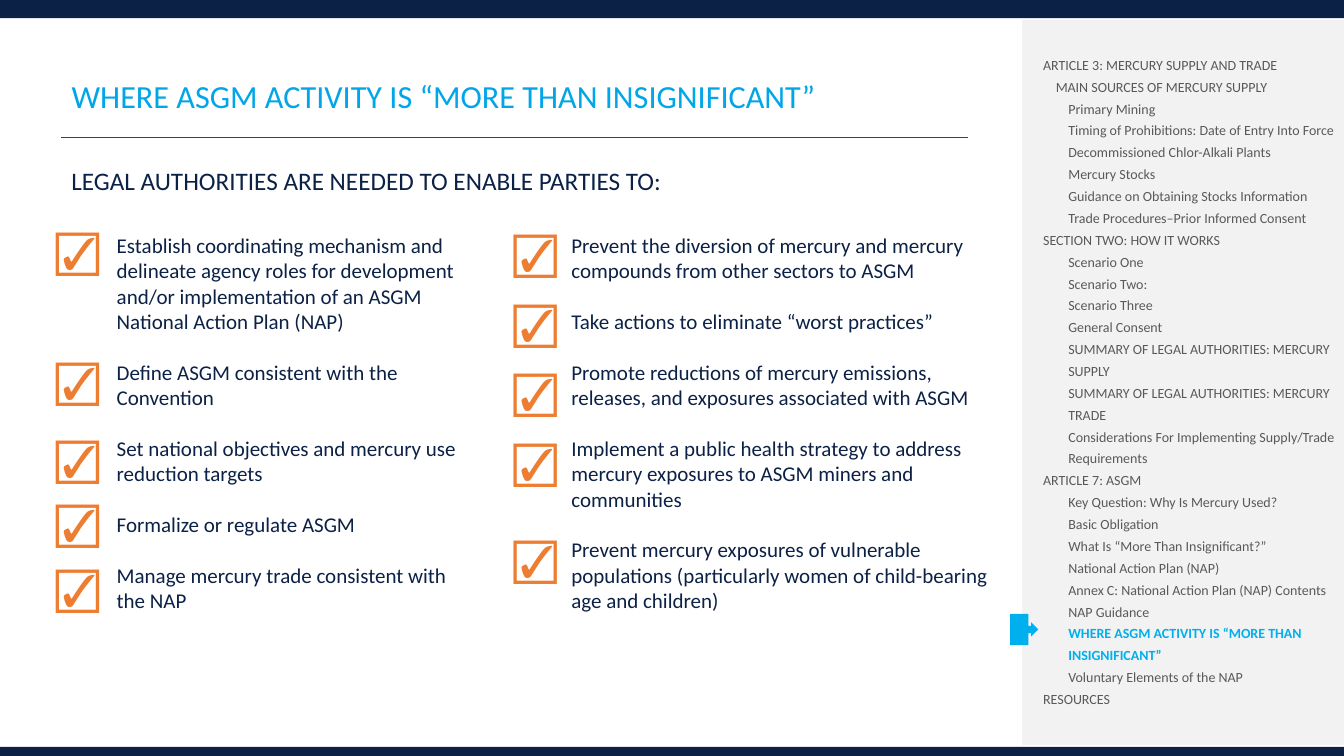
from lxml import etree
from pptx import Presentation
from pptx.dml.color import RGBColor
from pptx.enum.shapes import MSO_CONNECTOR, MSO_SHAPE
from pptx.enum.text import MSO_ANCHOR, MSO_AUTO_SIZE, PP_ALIGN
from pptx.oxml.ns import qn
from pptx.util import Inches, Pt

RECTANGLE = MSO_SHAPE.RECTANGLE
CALLOUT = MSO_SHAPE.RIGHT_ARROW_CALLOUT
STRAIGHT = MSO_CONNECTOR.STRAIGHT
TOP = MSO_ANCHOR.TOP
LEFT = PP_ALIGN.LEFT
FIT_SHAPE = MSO_AUTO_SIZE.SHAPE_TO_FIT_TEXT
FIXED = MSO_AUTO_SIZE.NONE

CELL = Inches(0.1)
COLUMNS, ROWS = 133.33, 75
MARGIN = 6.1
NAVY, ORANGE, SKY, CYAN = "0C2146", "ED7D31", "00A6E8", "00AFEE"
PALE, GREY, DARK = "F2F2F2", "595959", "404040"
LIST_GAP = 18.3
INDENT = 9

TITLE = "WHERE ASGM ACTIVITY IS “MORE THAN INSIGNIFICANT”"
SUBTITLE = "LEGAL AUTHORITIES ARE NEEDED TO ENABLE PARTIES TO:"

CHECKLISTS = [
    (4.5, 10.6, 38.7, [
        (21.6, "Establish coordinating mechanism and delineate agency roles for development "
               "and/or implementation of an ASGM National Action Plan (NAP)"),
        (34.5, "Define ASGM consistent with the Convention"),
        (42.2, "Set national objectives and mercury use reduction targets"),
        (48.6, "Formalize or regulate ASGM"),
        (55, "Manage mercury trade consistent with\vthe NAP"),
    ]),
    (49.9, 55.7, 43.6, [
        (21.8, "Prevent the diversion of mercury and mercury compounds from other sectors to ASGM"),
        (28.7, "Take actions to eliminate “worst practices”"),
        (35.6, "Promote reductions of mercury emissions, releases, and exposures associated with ASGM"),
        (42.5, "Implement a public health strategy to address mercury exposures to ASGM miners "
               "and communities"),
        (52.2, "Prevent mercury exposures of vulnerable populations (particularly women of "
               "child-bearing age and children)"),
    ]),
]

CONTENTS = [
    (0, "ARTICLE 3: MERCURY SUPPLY AND TRADE"),
    (1, "MAIN SOURCES OF MERCURY SUPPLY"),
    (2, "Primary Mining"),
    (2, "Timing of Prohibitions: Date of Entry Into Force"),
    (2, "Decommissioned Chlor-Alkali Plants"),
    (2, "Mercury Stocks"),
    (2, "Guidance on Obtaining Stocks Information"),
    (2, "Trade Procedures–Prior Informed Consent"),
    (0, "SECTION TWO: HOW IT WORKS"),
    (2, "Scenario One"),
    (2, "Scenario Two:"),
    (2, "Scenario Three"),
    (2, "General Consent"),
    (2, "SUMMARY OF LEGAL AUTHORITIES: MERCURY"),
    (2, "SUPPLY"),
    (2, "SUMMARY OF LEGAL AUTHORITIES: MERCURY"),
    (2, "TRADE"),
    (2, "Considerations For Implementing Supply/Trade"),
    (2, "Requirements"),
    (0, "ARTICLE 7: ASGM"),
    (2, "Key Question: Why Is Mercury Used?"),
    (2, "Basic Obligation"),
    (2, "What Is “More Than Insignificant?”"),
    (2, "National Action Plan (NAP)"),
    (2, "Annex C: National Action Plan (NAP) Contents"),
    (2, "NAP Guidance"),
    (2, "WHERE ASGM ACTIVITY IS “MORE THAN"),
    (2, "INSIGNIFICANT”"),
    (2, "Voluntary Elements of the NAP"),
    (0, "RESOURCES"),
]
CURRENT = ("WHERE ASGM ACTIVITY IS “MORE THAN", "INSIGNIFICANT”")


def color(value):
    return RGBColor.from_string(value)


def cells(*lengths):
    return [round(length * CELL) for length in lengths]


def style(paragraph, size, ink, font="Calibri", bold=False):
    for run in paragraph.runs:
        run.font.name = font
        run.font.size = Pt(size)
        run.font.bold = bold
        run.font.color.rgb = color(ink)


def add_block(slide, kind, box, fill):
    shape = slide.shapes.add_shape(kind, *cells(*box))
    shape.shadow.inherit = False
    shape.fill.solid()
    shape.fill.fore_color.rgb = color(fill)
    shape.line.fill.background()


def add_text(slide, box, lines, size, ink, font="Calibri", wrap=True):
    shape = slide.shapes.add_textbox(*cells(*box))
    frame = shape.text_frame
    frame.word_wrap = wrap
    frame.auto_size = FIT_SHAPE
    frame.text = "\n".join(lines)
    for paragraph in frame.paragraphs:
        style(paragraph, size, ink, font)
    return frame


def add_title(slide):
    title = slide.shapes.title
    title.left, title.top, title.width, title.height = cells(MARGIN, 7.5, 96.9, 6.1)
    frame = title.text_frame
    frame.text = TITLE
    frame.vertical_anchor = TOP
    frame.auto_size = FIXED
    paragraph = frame.paragraphs[0]
    paragraph.alignment = LEFT
    paragraph.line_spacing = 0.9
    style(paragraph, 23, SKY)


def add_rule(slide):
    rule = slide.shapes.add_connector(STRAIGHT, *cells(MARGIN, 13.6, 96, 13.6))
    rule.line.color.rgb = color(DARK)
    rule.line.width = Pt(0.5)
    etree.SubElement(rule._element.spPr, qn("a:effectLst"))


def add_checklist(slide, check_left, text_left, width, items):
    lines = [line for _, line in items]
    frame = add_text(slide, (text_left, 22.6, width, 38.9), lines, 15, NAVY)
    for paragraph in frame.paragraphs[1:]:
        paragraph.space_before = Pt(LIST_GAP)
    for top, _ in items:
        add_text(slide, (check_left, top, 6, 6.4), ["☑"], 32, ORANGE, "Arial", False)


def add_contents(slide):
    lines = [line for _, line in CONTENTS]
    frame = add_text(slide, (102.5, 4.6, COLUMNS - 102.5, 66.5), lines, 10, GREY)
    frame.margin_right = 0
    for paragraph, (level, line) in zip(frame.paragraphs, CONTENTS):
        paragraph.line_spacing = 1.3
        paragraph._p.get_or_add_pPr().set("marL", str(Pt(level * INDENT)))
        if line in CURRENT:
            style(paragraph, 10, CYAN, bold=True)


def main():
    presentation = Presentation()
    presentation.slide_width, presentation.slide_height = cells(COLUMNS, ROWS)
    slide = presentation.slides.add_slide(presentation.slide_layouts[5])
    add_block(slide, RECTANGLE, (0, 0, COLUMNS, 1.8), NAVY)
    add_block(slide, RECTANGLE, (0, 74.1, COLUMNS, 0.9), NAVY)
    add_block(slide, RECTANGLE, (101.4, 2, COLUMNS - 101.4, 71.9), PALE)
    add_title(slide)
    add_rule(slide)
    add_text(slide, (MARGIN, 15.9, 81.4, 4), [SUBTITLE], 18, NAVY)
    for checklist in CHECKLISTS:
        add_checklist(slide, *checklist)
    add_block(slide, CALLOUT, (100.2, 60.9, 2.8, 3.1), CYAN)
    add_contents(slide)
    presentation.save("out.pptx")


if __name__ == "__main__":
    main()
